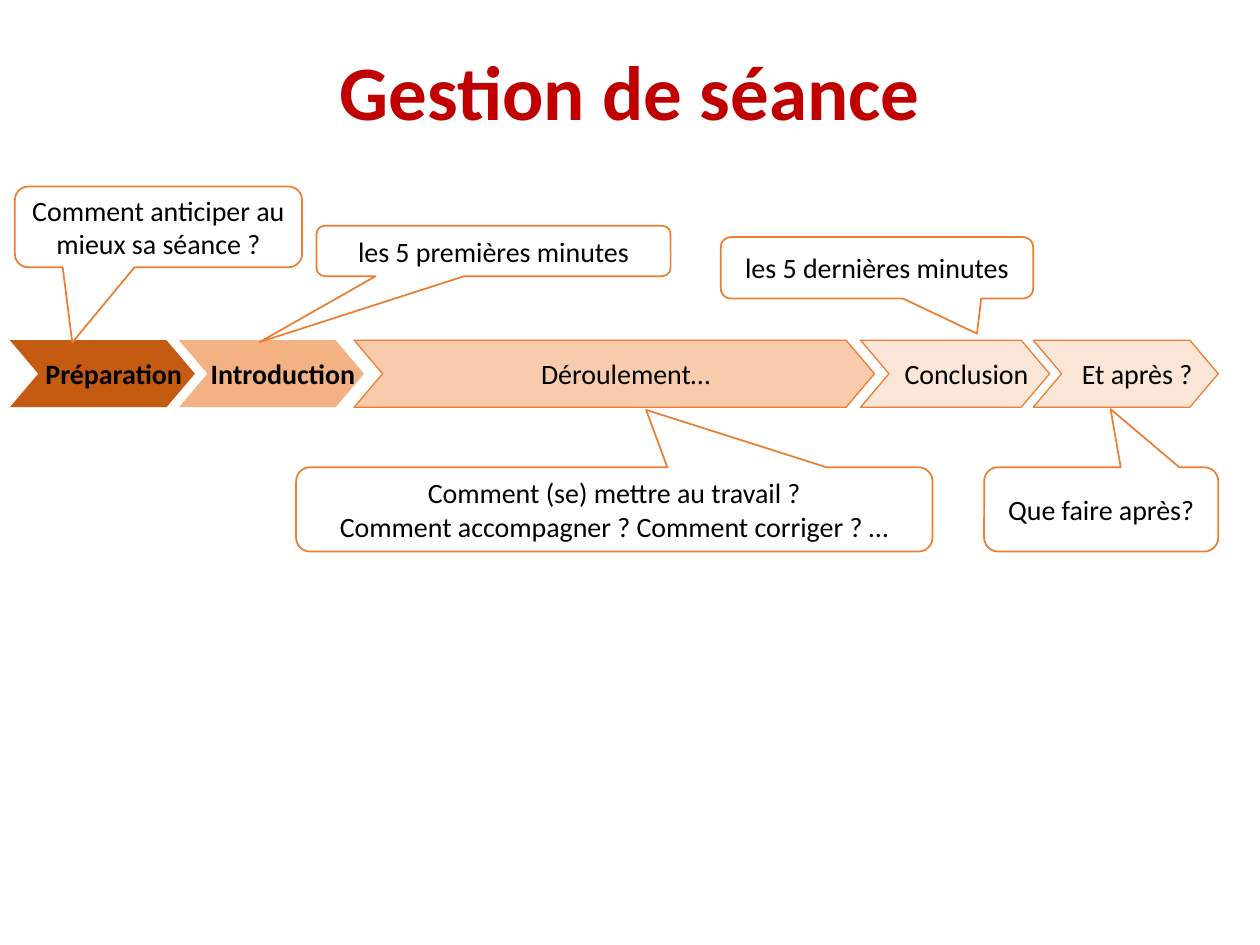
from pptx import Presentation
from pptx.dml.color import RGBColor
from pptx.enum.shapes import MSO_SHAPE
from pptx.enum.text import MSO_ANCHOR, PP_ALIGN
from pptx.util import Cm, Pt

COLORS = {
    "title": "C00000",
    "text": "000000",
    "line": "ED7D31",
    "dark": "C55A11",
    "medium": "F4B183",
    "light": "F8CBAD",
    "pale": "FBE5D6",
}


def rgb(name):
    return RGBColor.from_string(COLORS[name])


def write(tf, lines, size=16, color="text", bold=False):
    tf.vertical_anchor = MSO_ANCHOR.MIDDLE
    for i, line in enumerate(lines):
        p = tf.paragraphs[0] if i == 0 else tf.add_paragraph()
        p.alignment = PP_ALIGN.CENTER
        r = p.add_run()
        r.text = line
        r.font.name = "Calibri"
        r.font.size = Pt(size)
        r.font.bold = bold
        r.font.color.rgb = rgb(color)


def add_box(s, kind, box, adjustments, fill=None, line_width=None):
    sp = s.shapes.add_shape(kind, *(Cm(v) for v in box))
    sp.shadow.inherit = False
    for i, value in enumerate(adjustments):
        sp.adjustments[i] = value
    if fill:
        sp.fill.solid()
        sp.fill.fore_color.rgb = rgb(fill)
    else:
        sp.fill.background()
    if line_width:
        sp.line.color.rgb = rgb("line")
        sp.line.width = Pt(line_width)
    else:
        sp.line.fill.background()
    return sp


def add_title(s, box, text):
    title = s.shapes.title
    title.left, title.top, title.width, title.height = (Cm(v) for v in box)
    write(title.text_frame, [text], 44, "title", True)
    title.text_frame.paragraphs[0].line_spacing = 0.9


def add_timeline(s, box, phases):
    """Chevrons: offset from the left of the box, width, label, fill, main phase."""
    left, top, _, height = box
    for dx, width, label, fill, strong in phases:
        sp = add_box(s, MSO_SHAPE.CHEVRON, (left + dx, top, width, height),
                     [0.424], fill, None if strong else 0.75)
        tf = sp.text_frame
        tf.word_wrap = False
        tf.margin_left, tf.margin_right = Cm(0.71), Cm(0.25)
        tf.margin_top = tf.margin_bottom = Cm(0.13)
        write(tf, [label], bold=strong)


def add_callouts(s, box, callouts):
    """Callouts: offset within the box, size, pointer position, lines of text."""
    left, top, _, _ = box
    for dx, dy, width, height, pointer, lines in callouts:
        sp = add_box(s, MSO_SHAPE.ROUNDED_RECTANGULAR_CALLOUT,
                     (left + dx, top + dy, width, height),
                     [*pointer, 0.167], line_width=1)
        sp.text_frame.word_wrap = True
        write(sp.text_frame, lines)


def main():
    prs = Presentation()
    prs.slide_width, prs.slide_height = Cm(25.4), Cm(19.05)
    s = prs.slides.add_slide(prs.slide_layouts[5])

    add_title(s, (1.27, 0.33, 22.86, 3.18), "Gestion de séance")

    # Phases of the session
    add_timeline(s, (0.2, 6.86, 24.36, 1.35), [
        (3.41, 3.73, "Introduction", "medium", True),
        (0, 3.73, "Préparation", "dark", True),
        (17.15, 3.81, "Conclusion", "pale", False),
        (6.94, 10.49, "Déroulement…", "light", False),
        (20.63, 3.73, "Et après ?", "pale", False),
    ])

    # Callouts above the timeline
    add_callouts(s, (0.3, 3.76, 20.53, 2.26), [
        (0, 0, 5.79, 1.63, (-0.3, 1.43), ["Comment anticiper au mieux sa séance ?"]),
        (6.08, 0.79, 7.14, 1.02, (-0.66, 1.8), ["les 5 premières minutes"]),
        (14.23, 1.02, 6.3, 1.24, (0.32, 1.07), ["les 5 dernières minutes"]),
    ])

    # Callouts below the timeline
    add_callouts(s, (5.97, 9.42, 18.59, 1.7), [
        (0, 0, 12.83, 1.7, (0.05, -1.18),
         ["Comment (se) mettre au travail ?",
          "Comment accompagner ? Comment corriger ? …"]),
        (13.87, 0, 4.72, 1.7, (0.04, -1.19), ["Que faire après?"]),
    ])

    prs.save("out.pptx")


if __name__ == "__main__":
    main()
